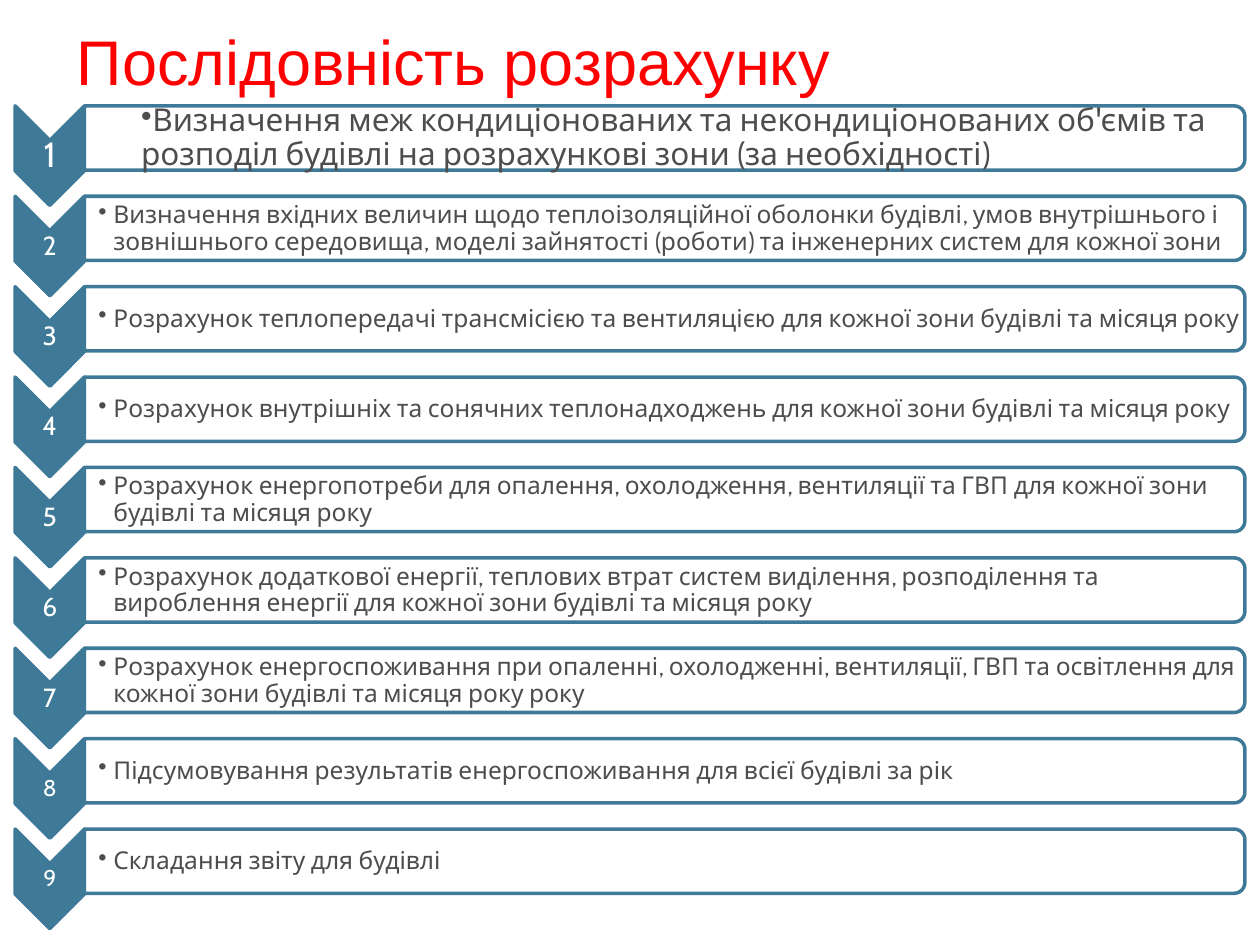
from lxml import etree
from pptx import Presentation
from pptx.dml.color import RGBColor
from pptx.enum.shapes import MSO_SHAPE
from pptx.enum.text import MSO_ANCHOR, PP_ALIGN
from pptx.oxml.ns import qn
from pptx.util import Inches, Pt

CHEVRON = MSO_SHAPE.CHEVRON
ROUND_TOP = MSO_SHAPE.ROUND_2_SAME_RECTANGLE
TOP, MIDDLE = MSO_ANCHOR.TOP, MSO_ANCHOR.MIDDLE
LEFT, CENTER = PP_ALIGN.LEFT, PP_ALIGN.CENTER

TEAL, WHITE, GRAY, RED = "3E7A98", "FFFFFF", "4D4D4D", "FF0000"
TITLE_FONT, STEP_FONT = "Arial", "Cabin"
STEP_PITCH = Inches(5.74) / 8

STEPS = [
    "Визначення меж кондиціонованих та некондиціонованих об'ємів та розподіл будівлі на розрахункові зони (за необхідності)",
    "Визначення вхідних величин щодо теплоізоляційної оболонки будівлі, умов внутрішнього і зовнішнього середовища, моделі зайнятості (роботи) та інженерних систем для кожної зони",
    "Розрахунок теплопередачі трансмісією та вентиляцією для кожної зони будівлі та місяця року",
    "Розрахунок внутрішніх та сонячних теплонадходжень для кожної зони будівлі та місяця року",
    "Розрахунок енергопотреби для опалення, охолодження, вентиляції та ГВП для кожної зони будівлі та місяця року",
    "Розрахунок додаткової енергії, теплових втрат систем виділення, розподілення та вироблення енергії для кожної зони будівлі та місяця року",
    "Розрахунок енергоспоживання при опаленні, охолодженні, вентиляції, ГВП та освітлення для кожної зони будівлі та місяця року року",
    "Підсумовування результатів енергоспоживання для всієї будівлі за рік",
    "Складання звіту для будівлі",
]
NUMBER_SIZES = [20] + [15] * 6 + [13] * 2


def color(value):
    """Turn a hex string into a colour."""
    return RGBColor.from_string(value)


def set_font(paragraph, name, size, value):
    """Set the font, size and colour of a paragraph."""
    paragraph.font.name = name
    paragraph.font.size = Pt(size)
    paragraph.font.color.rgb = color(value)


def add_turned_shape(slide, kind, left, top, width, height, fill):
    """Add a shape turned by 90 degrees that covers the given box."""
    shape = slide.shapes.add_shape(
        kind, left + (width - height) // 2, top + (height - width) // 2, height, width)
    shape.rotation = 90
    shape.shadow.inherit = False
    shape.fill.solid()
    shape.fill.fore_color.rgb = color(fill)
    shape.line.color.rgb = color(TEAL)
    shape.line.width = Pt(2)
    return shape


def add_text(slide, left, top, width, height, text, inset=Inches(0.01)):
    """Add a wrapped, vertically centred text box and return its paragraph."""
    frame = slide.shapes.add_textbox(left, top, width, height).text_frame
    frame.word_wrap = True
    frame.vertical_anchor = MIDDLE
    frame.margin_left = inset
    frame.margin_top = frame.margin_right = frame.margin_bottom = Inches(0.01)
    paragraph = frame.paragraphs[0]
    paragraph.text = text
    paragraph.line_spacing = 0.9
    return paragraph


def add_bullet(paragraph, margin, indent):
    """Give a paragraph a round bullet with the given indents."""
    properties = paragraph._p.get_or_add_pPr()
    properties.set("marL", str(margin))
    properties.set("indent", str(indent))
    etree.SubElement(properties, qn("a:buChar")).set("char", "•")


def add_number(slide, left, top, number, size):
    """Draw the downward chevron with the step number."""
    width = Inches(0.55)
    add_turned_shape(slide, CHEVRON, left, top, width, Inches(0.79), TEAL)
    paragraph = add_text(slide, left, top + Inches(0.28), width, Inches(0.24), str(number))
    paragraph.alignment = CENTER
    set_font(paragraph, STEP_FONT, size, WHITE)


def add_card(slide, left, top, text, leading):
    """Draw the outlined card with the description of a step."""
    card = add_turned_shape(slide, ROUND_TOP, left, top, Inches(9.21), Inches(0.51), WHITE)
    fill_color = card.fill._xPr.find(qn("a:solidFill"))[0]
    etree.SubElement(fill_color, qn("a:alpha")).set("val", "90000")
    paragraph = add_text(slide, left, top + Inches(0.03), Inches(9.19), Inches(0.46),
                         text, Inches(0.14 if leading else 0.11))
    paragraph.level = 1
    if leading:
        add_bullet(paragraph, Inches(0.31), 0)
    else:
        add_bullet(paragraph, Inches(0.12), Inches(-0.12))
    set_font(paragraph, STEP_FONT, 18 if leading else 14, GRAY)


def add_steps(slide, left, top):
    """Stack the numbered steps at an equal pitch."""
    for index, (text, size) in enumerate(zip(STEPS, NUMBER_SIZES)):
        step_top = top + round(index * STEP_PITCH)
        add_number(slide, left, step_top, index + 1, size)
        add_card(slide, left + Inches(0.55), step_top, text, index == 0)


def add_title(slide, left, top, width, height):
    """Place and format the slide title."""
    title = slide.shapes.title
    title.left, title.top, title.width, title.height = left, top, width, height
    frame = title.text_frame
    frame.text = "Послідовність розрахунку"
    frame.word_wrap = False
    frame.vertical_anchor = TOP
    paragraph = frame.paragraphs[0]
    paragraph.alignment = LEFT
    set_font(paragraph, TITLE_FONT, 36, RED)


def main():
    """Build and save the slide."""
    presentation = Presentation()
    presentation.slide_width, presentation.slide_height = Inches(10), Inches(7.5)
    slide = presentation.slides.add_slide(presentation.slide_layouts[5])
    add_title(slide, Inches(0.51), Inches(0.13), Inches(6.38), Inches(0.71))
    add_steps(slide, Inches(0.12), Inches(0.84))
    presentation.save("out.pptx")


if __name__ == "__main__":
    main()
